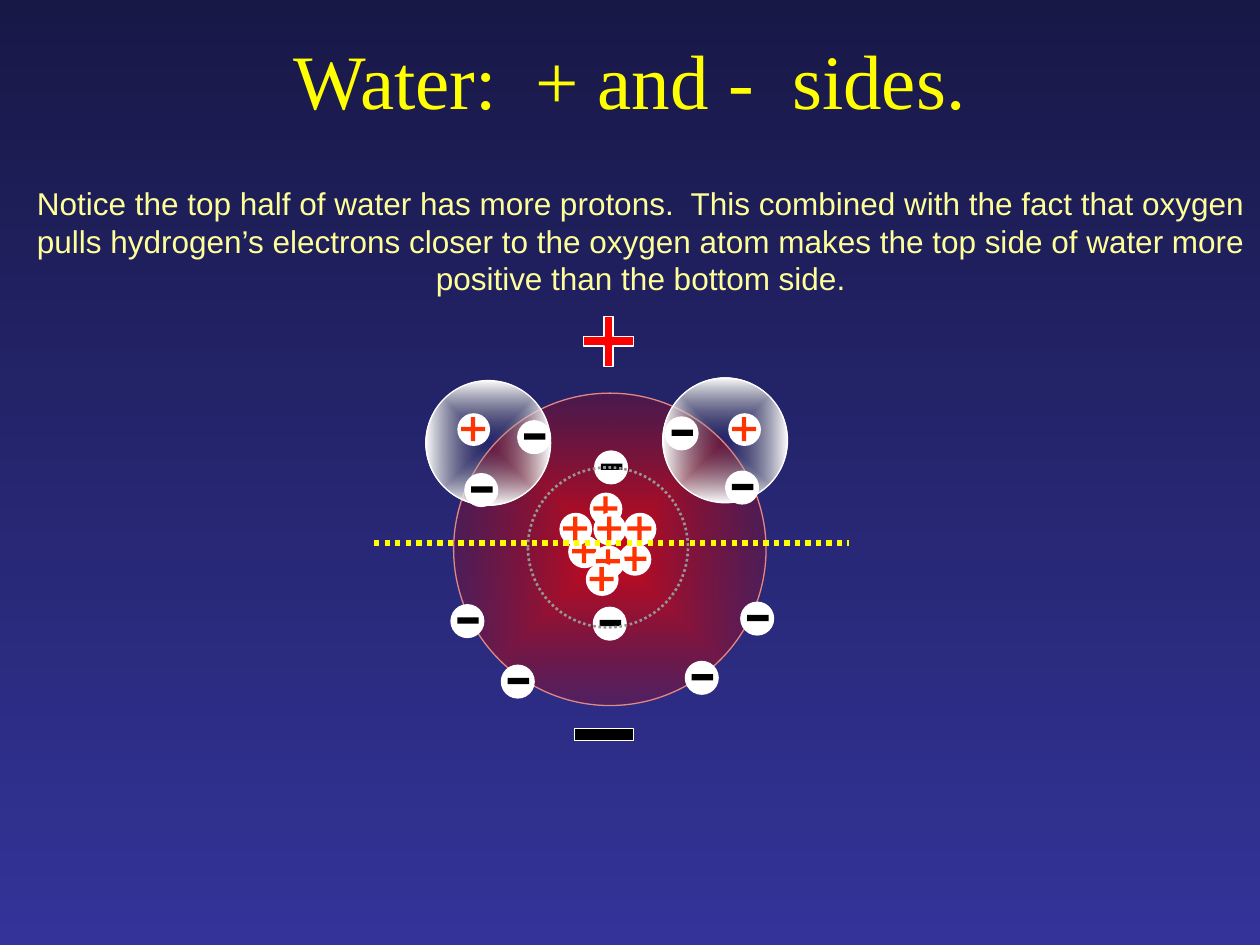
from dataclasses import dataclass

from lxml import etree
from pptx import Presentation
from pptx.dml.color import RGBColor
from pptx.enum import dml, shapes, text
from pptx.oxml import ns
from pptx.util import Inches, Pt


@dataclass(frozen=True)
class Theme:
    night: str = "181847"
    blue: str = "333399"
    yellow: str = "FFFF00"
    cream: str = "FFFF99"
    white: str = "FFFFFF"
    black: str = "000000"
    red: str = "FF0000"
    orange: str = "FF3300"
    wine: str = "B60000"
    rose: str = "E08888"
    dim: str = "666666"
    gray: str = "969696"
    title: int = 44
    body: int = 18


THEME = Theme()
FORM = shapes.MSO_SHAPE
DOTS = dml.MSO_LINE.ROUND_DOT
PROTONS = [(0.66, 0.78), (2.81, 0.78), (1.71, 1.41), (1.98, 1.57), (1.54, 1.75),
           (1.74, 1.57), (1.94, 1.81), (1.73, 1.83), (1.47, 1.57), (1.68, 1.97)]
ELECTRONS = [(1.74, 2.32), (1.75, 1.08), (2.91, 2.28), (1.01, 2.78), (2.31, 0.81),
             (0.61, 2.3), (2.79, 1.24), (1.14, 0.84), (0.72, 1.26), (2.47, 2.75)]


def rgb(code):
    return RGBColor.from_string(code)


def add_form(home, kind, box, fill=None, line=None, width=0.75):
    form = home.add_shape(kind, *map(Inches, box))
    form.shadow.inherit = False
    if fill:
        form.fill.solid()
        form.fill.fore_color.rgb = rgb(fill)
    else:
        form.fill.background()
    if line:
        form.line.color.rgb = rgb(line)
        form.line.width = Pt(width)
    else:
        form.line.fill.background()
    return form


def add_plus(home, box, fill, line=None):
    form = add_form(home, FORM.CROSS, box, fill, line)
    form.adjustments[0] = 0.41


def add_glow(home, box, stops, line):
    form = add_form(home, FORM.OVAL, box, line=line)
    form.fill.gradient()
    for stop, (code, alpha) in zip(form.fill.gradient_stops, stops):
        stop.color.rgb = rgb(code)
    grad = form._element.spPr.find(ns.qn("a:gradFill"))
    for color, (code, alpha) in zip(grad.iter(ns.qn("a:srgbClr")), stops):
        etree.SubElement(color, ns.qn("a:alpha"), val=str(alpha * 1000))
    grad.remove(grad.find(ns.qn("a:lin")))
    route = etree.SubElement(grad, ns.qn("a:path"), {"path": "shape"})
    etree.SubElement(route, ns.qn("a:fillToRect"),
                     {side: "50000" for side in "ltrb"})


def add_proton(home, x, y):
    group = home.add_group_shape().shapes
    add_form(group, FORM.OVAL, (x, y, 0.26, 0.26), THEME.white)
    add_plus(group, (x + 0.03, y + 0.03, 0.19, 0.19), THEME.orange)


def add_electron(home, x, y):
    group = home.add_group_shape().shapes
    add_form(group, FORM.OVAL, (x, y, 0.26, 0.26), THEME.white, THEME.white)
    add_form(group, FORM.RECTANGLE, (x + 0.05, y + 0.1, 0.17, 0.05), THEME.black)


def add_divide(home, x, y, width):
    line = home.add_connector(shapes.MSO_CONNECTOR.STRAIGHT,
                              *map(Inches, (x, y, x + width, y)))
    line.line.color.rgb = rgb(THEME.yellow)
    line.line.width = Pt(3)
    line.line.dash_style = DOTS
    etree.SubElement(line._element.spPr, ns.qn("a:effectLst"))


def add_water(home, box):
    left, top, width, height = box

    def place(x, y, wide, high=None):
        return left + x, top + y, wide, high or wide

    add_glow(home, place(0.63, 0.62, 2.48),
             [(THEME.red, 79), (THEME.wine, 25)], THEME.rose)
    for x, y in [(2.29, 0.5), (0.41, 0.52)]:
        add_glow(home, place(x, y, 0.99),
                 [(THEME.dim, 0), (THEME.white, 100)], THEME.white)
    add_plus(home, place(1.66, 0.01, 0.4), THEME.red, THEME.white)
    add_form(home, FORM.RECTANGLE, place(1.59, 3.28, 0.47, 0.1),
             THEME.black, THEME.white)
    for x, y in PROTONS:
        add_proton(home, left + x, top + y)
    for x, y in ELECTRONS:
        add_electron(home, left + x, top + y)
    add_divide(home, left, top + 1.81, width)
    ring = add_form(home, FORM.OVAL, place(1.22, 1.21, 1.27), line=THEME.gray, width=1.5)
    ring.line.dash_style = DOTS


def add_words(home, box, words, font, size, color, anchor):
    frame = home.add_textbox(*map(Inches, box)).text_frame
    frame.word_wrap = True
    frame.vertical_anchor = anchor
    para = frame.paragraphs[0]
    para.alignment = text.PP_ALIGN.CENTER
    run = para.add_run()
    run.text = words
    run.font.name = font
    run.font.size = Pt(size)
    run.font.color.rgb = rgb(color)


def paint_back(slide):
    fill = slide.background.fill
    fill.gradient()
    fill.gradient_angle = 270
    for stop, code in zip(fill.gradient_stops, (THEME.night, THEME.blue)):
        stop.color.rgb = rgb(code)


def main():
    deck = Presentation()
    deck.slide_width, deck.slide_height = Inches(10), Inches(7.5)
    slide = deck.slides.add_slide(deck.slide_layouts[6])
    home = slide.shapes
    paint_back(slide)
    add_words(home, (0.75, 0, 8.5, 1.25), "Water:  + and -  sides.",
              "Times New Roman", THEME.title, THEME.yellow, text.MSO_ANCHOR.MIDDLE)
    add_water(home, (2.97, 2.5, 3.77, 3.38))
    add_words(home, (0.17, 1.41, 9.83, 1.01),
              "Notice the top half of water has more protons.  This combined with "
              "the fact that oxygen pulls hydrogen’s electrons closer to the oxygen "
              "atom makes the top side of water more positive than the bottom side.",
              "Arial", THEME.body, THEME.cream, text.MSO_ANCHOR.TOP)
    deck.save("out.pptx")


if __name__ == "__main__":
    main()
